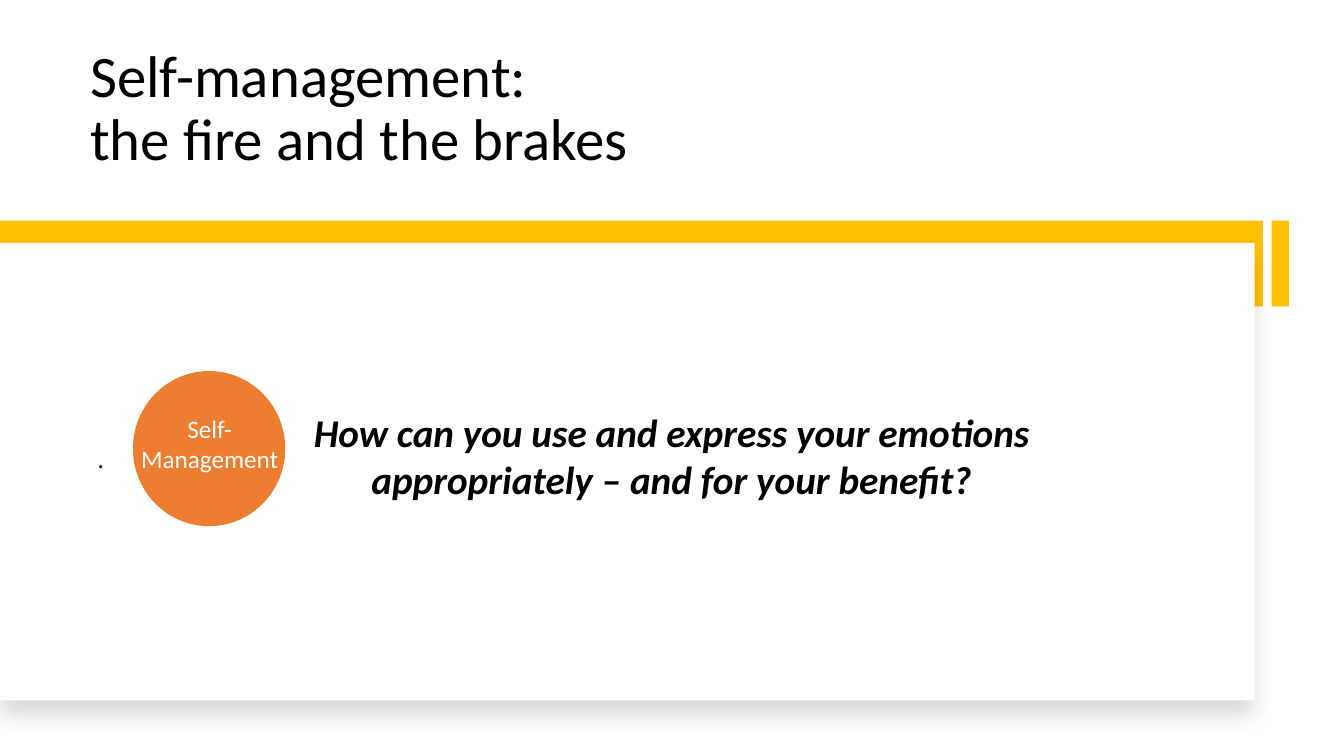
import pptx
import pptx.util
import pptx.dml.color
import pptx.enum.shapes
import pptx.enum.text
import pptx.oxml
import pptx.oxml.ns

Cm, Pt = pptx.util.Cm, pptx.util.Pt
SHAPE = pptx.enum.shapes.MSO_SHAPE
ALIGN = pptx.enum.text.PP_ALIGN
ANCHOR = pptx.enum.text.MSO_ANCHOR

COLORS = {"text": "000000", "light": "FFFFFF", "accent": "FFC000", "circle": "ED7D31"}
FONT = "Calibri"


def rgb(name):
    return pptx.dml.color.RGBColor.from_string(COLORS[name])


def add_block(s, kind, box, color):
    sp = s.shapes.add_shape(kind, *map(Cm, box))
    sp.shadow.inherit = False
    sp.fill.solid()
    sp.fill.fore_color.rgb = rgb(color)
    sp.line.fill.background()
    return sp


def add_text(s, text, box, size, color="text", bold=False, italic=False,
             align=ALIGN.LEFT, anchor=ANCHOR.TOP, spacing=1.0, after=0,
             insets=(0.25, 0.13, 0.25, 0.13)):
    """Add a wrapped text box; insets are left, top, right, bottom in cm."""
    tf = s.shapes.add_textbox(*map(Cm, box)).text_frame
    tf.word_wrap = True
    tf.vertical_anchor = anchor
    tf.margin_left, tf.margin_top, tf.margin_right, tf.margin_bottom = map(Cm, insets)
    p = tf.paragraphs[0]
    p.text = text
    p.alignment = align
    p.line_spacing = spacing
    p.space_after = Pt(after)
    for r in p.runs:
        r.font.name = FONT
        r.font.size = Pt(size)
        r.font.bold = bold
        r.font.italic = italic
        r.font.color.rgb = rgb(color)


def add_soft_shadow(sp):
    effects = sp._element.spPr.find(pptx.oxml.ns.qn("a:effectLst"))
    effects.append(pptx.oxml.parse_xml(
        f'<a:outerShdw {pptx.oxml.ns.nsdecls("a")} blurRad="{Pt(15)}" dist="{Pt(11)}" '
        f'dir="5400000" algn="t" rotWithShape="0"><a:srgbClr val="{COLORS["text"]}">'
        '<a:alpha val="15000"/></a:srgbClr></a:outerShdw>'))


def add_title(s, box):
    add_text(s, "Self-management: \vthe fire and the brakes", box, 42,
             anchor=ANCHOR.BOTTOM, spacing=0.9, insets=(0.03, 0, 0, 0))


def add_panel(s, box):
    """Draw the yellow band with its end tab, and the white panel over it."""
    x, y, w, h = box
    band_h, tab_w, gap = 2.16, 0.43, 0.22
    add_block(s, SHAPE.RECTANGLE, (x + w - tab_w, y, tab_w, band_h), "accent")
    band_w = w - tab_w - gap
    add_block(s, SHAPE.RECTANGLE, (x, y, band_w, band_h), "accent")
    panel = add_block(s, SHAPE.RECTANGLE, (x, y + 0.56, band_w - 0.21, h - 0.56), "light")
    add_soft_shadow(panel)


def add_content(s, box):
    """Place the body text, the question and the labelled circle."""
    x, y, w, h = box
    add_text(s, ".", box, 18, anchor=ANCHOR.MIDDLE, spacing=0.9, after=6,
             insets=(0.25, 0.13, 0.25, 0.9))
    add_text(s, "How can you use and express your emotions appropriately – and for your benefit?",
             (x + 5.28, y + 2.95, 18.87, 2.64), 28, bold=True, italic=True, align=ALIGN.CENTER)
    add_block(s, SHAPE.OVAL, (x + 1.14, y + 2.14, 3.84, 3.91), "circle")
    add_text(s, "Self-Management", (x + 0.99, y + 3.08, 4.17, 1.8), 18,
             color="light", align=ALIGN.CENTER)


def main():
    prs = pptx.Presentation()
    prs.slide_width, prs.slide_height = Cm(33.87), Cm(19.05)
    s = prs.slides.add_slide(prs.slide_layouts[6])
    add_title(s, (2.24, 1.07, 25.65, 3.3))
    add_panel(s, (0, 5.56, 32.48, 12.09))
    add_content(s, (2.21, 7.21, 28.17, 9.55))
    prs.save("out.pptx")


if __name__ == "__main__":
    main()
